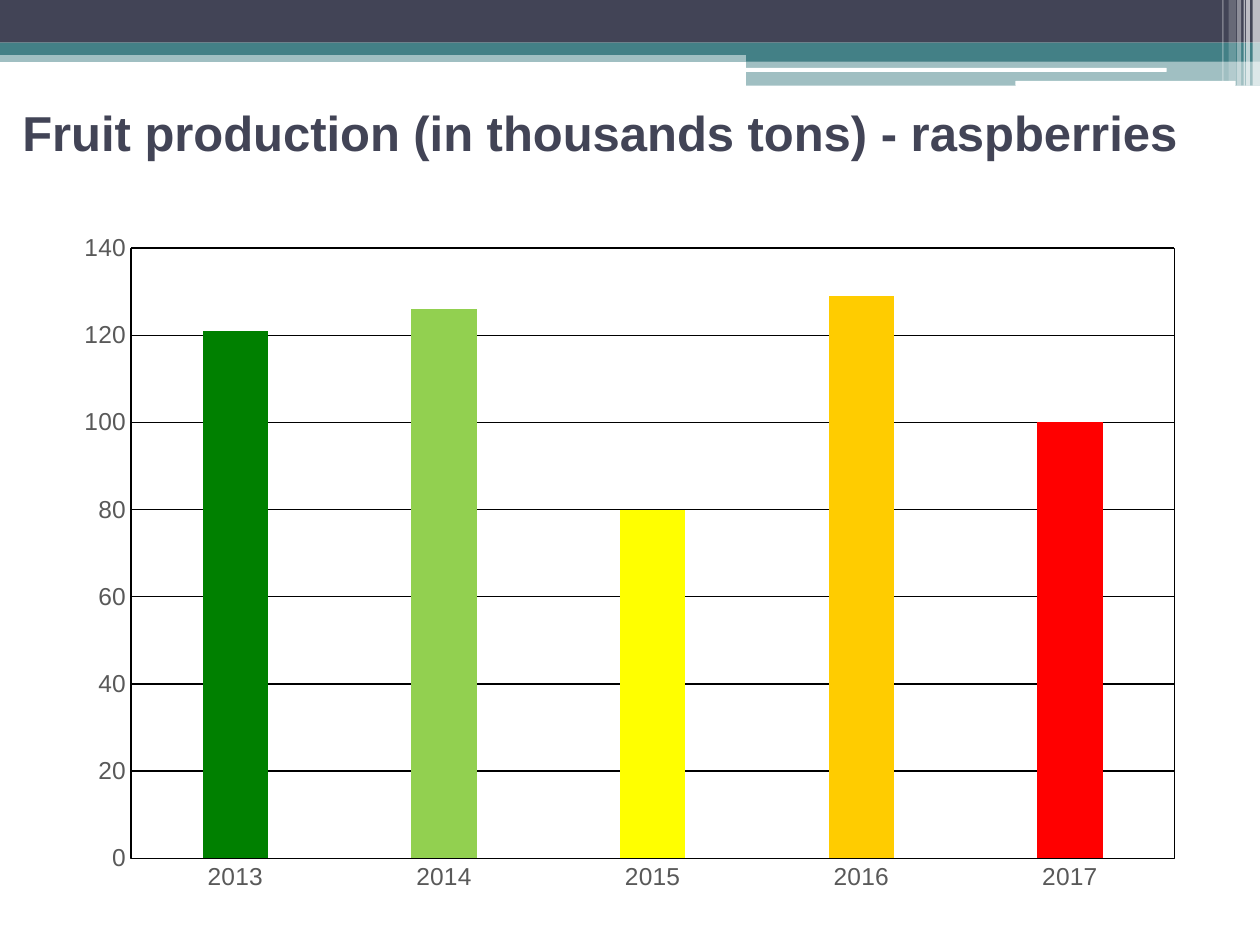
from lxml import etree
from pptx import Presentation
from pptx.chart.data import CategoryChartData
from pptx.dml.color import RGBColor
from pptx.enum import chart as ch, shapes, text
from pptx.oxml import parse_xml
from pptx.oxml.ns import nsdecls, qn
from pptx.util import Cm, Pt

COLORS = {"navy": "424456", "teal": "438086", "white": "FFFFFF", "black": "000000",
          "grey": "595959", "series": "53548A", "green": "008000", "lime": "92D050",
          "yellow": "FFFF00", "amber": "FFCC00", "red": "FF0000"}
TITLE = "Fruit production (in thousands tons) - raspberries"
HARVEST = [("2013", 121, "green"), ("2014", 126, "lime"), ("2015", 80, "yellow"),
           ("2016", 129, "amber"), ("2017", 100, "red")]

WIDTH, HEIGHT = 25.4, 19.05
STEP_LEFT = 15.04
# left, top, width, height, colour, opacity in percent
BANDS = [
    (0, 1.02, WIDTH, 0.23, "teal", 50),
    (0, 0, WIDTH, 0.86, "navy", 100),
    (0, 0.86, WIDTH, 0.25, "teal", 100),
    (STEP_LEFT, 0.99, WIDTH - STEP_LEFT, 0.25, "teal", 100),
    (STEP_LEFT, 1.23, WIDTH - STEP_LEFT, 0.5, "teal", 50),
]
ROUNDED_LINES = [(15.01, 1.37, 8.51, 0.08), (20.47, 1.63, 4.44, 0.1)]
# left, width, height, opacity in percent
STRIPES = [(25.25, 0.15, 1.73, 65), (25.12, 0.08, 1.73, 65), (25.07, 0.03, 1.73, 60),
           (24.94, 0.08, 1.73, 40), (24.77, 0.15, 1.63, 20), (24.64, 0.03, 1.63, 30)]
# inner plot area as fractions of the chart
PLOT = {"x": 0.06, "y": 0.04, "w": 0.92, "h": 0.89}


def rgb(name):
    return RGBColor.from_string(COLORS[name])


def add_bar(s, left, top, width, height, color, opacity=100,
            kind=shapes.MSO_SHAPE.RECTANGLE):
    sp = s.shapes.add_shape(kind, Cm(left), Cm(top), Cm(width), Cm(height))
    sp.shadow.inherit = False
    sp.line.fill.background()
    sp.fill.solid()
    sp.fill.fore_color.rgb = rgb(color)
    if opacity < 100:
        clr = sp._element.spPr.find(".//" + qn("a:srgbClr"))
        etree.SubElement(clr, qn("a:alpha")).set("val", str(opacity * 1000))


def add_header(s):
    for band in BANDS:
        add_bar(s, *band)
    for box in ROUNDED_LINES:
        add_bar(s, *box, "white", kind=shapes.MSO_SHAPE.ROUNDED_RECTANGLE)
    for left, width, height, opacity in STRIPES:
        add_bar(s, left, 0, width, height, "white", opacity)


def add_title(s):
    tf = s.shapes.add_textbox(Cm(0.2), Cm(1.7), Cm(24.77), Cm(1.9)).text_frame
    tf.word_wrap = True
    tf.vertical_anchor = text.MSO_ANCHOR.MIDDLE
    p = tf.paragraphs[0]
    p.text = TITLE
    p.font.name, p.font.size, p.font.bold = "Arial", Pt(28), True
    p.font.color.rgb = rgb("navy")


def style_line(line):
    line.color.rgb = rgb("black")
    line.width = Pt(0.75)


def frame_plot(chart):
    """Fix the inner plot area and outline it."""
    area = chart._chartSpace.chart.plotArea
    for old in area.findall(qn("c:layout")):
        area.remove(old)
    modes = "".join(f'<c:{k}Mode val="edge"/>' for k in "xy")
    sizes = "".join(f'<c:{k} val="{v}"/>' for k, v in PLOT.items())
    area.insert(0, parse_xml(
        f'<c:layout {nsdecls("c")}><c:manualLayout><c:layoutTarget val="inner"/>'
        f'{modes}{sizes}</c:manualLayout></c:layout>'))
    area.append(parse_xml(
        f'<c:spPr {nsdecls("c", "a")}><a:noFill/><a:ln w="9525"><a:solidFill>'
        f'<a:srgbClr val="{COLORS["black"]}"/></a:solidFill></a:ln></c:spPr>'))


def add_harvest_chart(s):
    data = CategoryChartData()
    data.categories = [year for year, _, _ in HARVEST]
    data.add_series("Series 1", [tons for _, tons, _ in HARVEST])
    chart = s.shapes.add_chart(ch.XL_CHART_TYPE.COLUMN_CLUSTERED, Cm(1.27), Cm(4.45),
                               Cm(22.86), Cm(13.82), data).chart
    chart.has_legend = chart.has_title = False
    chart.font.name, chart.font.size = "Cambria", Pt(10)
    chart.font.color.rgb = rgb("black")

    plot = chart.plots[0]
    plot.vary_by_categories = False
    plot.gap_width, plot.overlap = 219, -27
    series = plot.series[0]
    series.format.fill.solid()
    series.format.fill.fore_color.rgb = rgb("series")
    for i, (_, _, color) in enumerate(HARVEST):
        fill = series.points[i].format.fill
        fill.solid()
        fill.fore_color.rgb = rgb(color)

    for axis in (chart.category_axis, chart.value_axis):
        axis.major_tick_mark = axis.minor_tick_mark = ch.XL_TICK_MARK.NONE
        font = axis.tick_labels.font
        font.name, font.size = "Arial", Pt(14)
        font.color.rgb = rgb("grey")
    style_line(chart.category_axis.format.line)
    values = chart.value_axis
    values.minimum_scale, values.maximum_scale, values.major_unit = 0, 140, 20
    values.format.line.fill.background()
    style_line(values.major_gridlines.format.line)
    frame_plot(chart)


def main():
    prs = Presentation()
    prs.slide_width, prs.slide_height = Cm(WIDTH), Cm(HEIGHT)
    s = prs.slides.add_slide(prs.slide_layouts[6])
    add_header(s)
    add_title(s)
    add_harvest_chart(s)
    prs.save("out.pptx")


if __name__ == "__main__":
    main()
